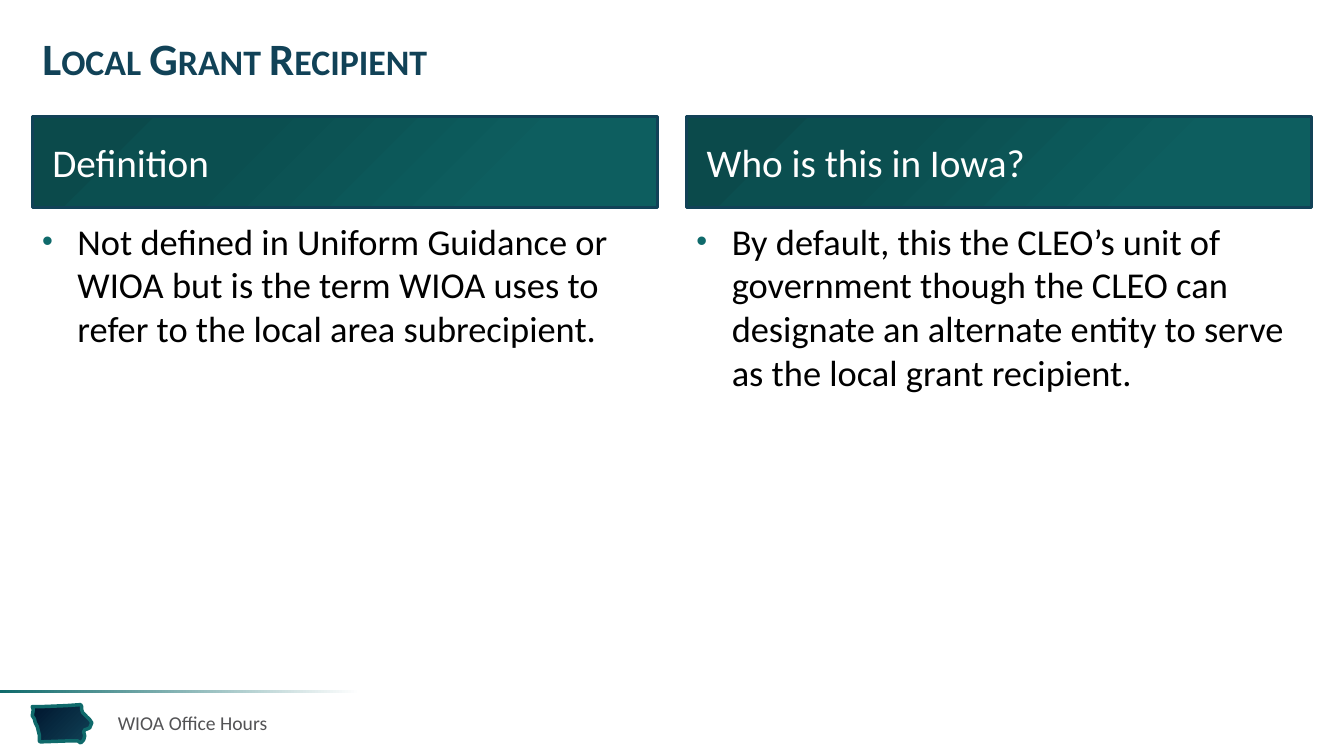
from dataclasses import dataclass

from lxml import etree
from pptx import Presentation
from pptx.dml.color import RGBColor
from pptx.enum.shapes import MSO_SHAPE
from pptx.enum.text import MSO_ANCHOR, MSO_AUTO_SIZE, PP_ALIGN
from pptx.oxml.ns import nsdecls, qn
from pptx.util import Pt

PX = 9144
RECTANGLE = MSO_SHAPE.RECTANGLE
TOP, MIDDLE = MSO_ANCHOR.TOP, MSO_ANCHOR.MIDDLE
LEFT, NO_FIT = PP_ALIGN.LEFT, MSO_AUTO_SIZE.NONE
TITLE_ONLY = 5


@dataclass(frozen=True)
class Theme:
    """Colours, gradients and type sizes of the slide."""
    font: str = "Calibri"
    navy: str = "114257"
    teal: str = "0F6A6B"
    white: str = "FFFFFF"
    black: str = "000000"
    grey: str = "535355"
    title_size: int = 32
    heading_size: int = 28
    body_size: int = 26
    footer_size: int = 14
    heading_stops: tuple = ((0, "0D5E5F"), (23, "0D5E5F"), (69, "0B4F50"), (97, "0B4A4B"))
    state_stops: tuple = ((0, "00162E"), (100, "114257"))
    rule_stops: tuple = ((6, "FFFFFF"), (100, "0F6A6B"))


THEME = Theme()

COLUMNS = (
    ("Definition",
     "Not defined in Uniform Guidance or WIOA but is the term WIOA uses to refer "
     "to the local area subrecipient."),
    ("Who is this in Iowa?",
     "By default, this the CLEO’s unit of government though the CLEO can designate "
     "an alternate entity to serve as the local grant recipient."),
)

STATE_OUTLINE = (
    (48, 0), (34, 1), (10, 2), (0, 2), (1, 5), (0, 11), (2, 14), (3, 18), (5, 22),
    (6, 26), (7, 30), (7, 36), (8, 37), (36, 36), (45, 36), (48, 38), (51, 35),
    (52, 31), (51, 27), (52, 25), (55, 24), (57, 23), (59, 18), (57, 15), (54, 12),
    (52, 10), (50, 8), (49, 5), (49, 2),
)


def px(*lengths):
    """Turn lengths in px into EMU."""
    return [length * PX for length in lengths]


def place(shape, box):
    """Put a shape at a (left, top, width, height) box in px."""
    shape.left, shape.top, shape.width, shape.height = px(*box)


def paint(shape, stops, angle=None, line=None, line_width=0):
    """Give a shape a linear or corner-centred gradient, and a line."""
    shape.shadow.inherit = False
    shape.fill.gradient()
    stop_xml = "".join(
        f'<a:gs pos="{pos * 1000}"><a:srgbClr val="{colour}"/></a:gs>' for pos, colour in stops)
    if angle is None:
        course = '<a:path path="circle"><a:fillToRect l="100000" t="100000"/></a:path>'
    else:
        course = f'<a:lin ang="{angle * 60000}" scaled="0"/>'
    gradient = etree.fromstring(
        f'<a:gradFill {nsdecls("a")} rotWithShape="1"><a:gsLst>{stop_xml}</a:gsLst>'
        f'{course}</a:gradFill>')
    properties = shape.element.spPr
    properties.replace(properties.find(qn("a:gradFill")), gradient)
    if line:
        shape.line.color.rgb = RGBColor.from_string(line)
        shape.line.width = Pt(line_width)
    else:
        shape.line.fill.background()


def add_bullet(paragraph, colour, indent):
    """Give a paragraph a hanging round bullet."""
    properties = paragraph._p.get_or_add_pPr()
    properties.set("marL", str(indent * PX))
    properties.set("indent", str(-indent * PX))
    for xml in (f'<a:buClr {nsdecls("a")}><a:srgbClr val="{colour}"/></a:buClr>',
                f'<a:buSzPct {nsdecls("a")} val="85000"/>',
                f'<a:buFont {nsdecls("a")} typeface="Arial"/>',
                f'<a:buChar {nsdecls("a")} char="•"/>'):
        properties.append(etree.fromstring(xml))


def write(shape, text, size, colour, bold=False, small_caps=False, anchor=TOP,
          insets=(10, 5, 10, 5), spacing=None, bullet=None):
    """Write one formatted paragraph into a shape."""
    frame = shape.text_frame
    frame.word_wrap = True
    frame.auto_size = NO_FIT
    frame.vertical_anchor = anchor
    (frame.margin_left, frame.margin_top,
     frame.margin_right, frame.margin_bottom) = px(*insets)
    paragraph = frame.paragraphs[0]
    paragraph.alignment = LEFT
    if spacing:
        paragraph.line_spacing = spacing
    if bullet:
        add_bullet(paragraph, bullet, indent=35)
    run = paragraph.add_run()
    run.text = text
    run.font.name = THEME.font
    run.font.size = Pt(size)
    run.font.bold = bold
    run.font.color.rgb = RGBColor.from_string(colour)
    if small_caps:
        run.font._element.set("cap", "small")


def add_title(slide, box, text):
    """Move and fill the title placeholder."""
    title = slide.shapes.title
    place(title, box)
    write(title, text, THEME.title_size, THEME.navy, bold=True, small_caps=True,
          anchor=MIDDLE, spacing=0.85)


def add_column(slide, box, heading, body):
    """Build a heading band with a bulleted text below it."""
    left, top, width, height = box
    band_height, gap = 90, 6
    band = slide.shapes.add_shape(RECTANGLE, *px(left, top, width, band_height))
    paint(band, THEME.heading_stops, line=THEME.navy, line_width=2)
    write(band, heading, THEME.heading_size, THEME.white, anchor=MIDDLE,
          insets=(20, 0, 20, 0))
    offset = band_height + gap
    details = slide.shapes.add_textbox(*px(left, top + offset, width, height - offset))
    write(details, body, THEME.body_size, THEME.black, bullet=THEME.teal)


def add_footer(slide, box, text):
    """Build the fading rule, the state outline and the footer text."""
    left, top, width, height = box
    rule = slide.shapes.add_shape(RECTANGLE, *px(left, top, 380, 3))
    paint(rule, THEME.rule_stops, angle=180)
    state_left, state_top = left + 32, top + 14
    outline = [(state_left + x, state_top + y) for x, y in STATE_OUTLINE]
    builder = slide.shapes.build_freeform(*outline[0], scale=PX)
    builder.add_line_segments(outline[1:], close=True)
    paint(builder.convert_to_shape(), THEME.state_stops, angle=45,
          line=THEME.teal, line_width=2.5)
    series = slide.shapes.add_textbox(*px(left + 107, top + 12, width - 427, height - 25))
    write(series, text, THEME.footer_size, THEME.grey, anchor=MIDDLE)


def main():
    """Build and save the slide."""
    deck = Presentation()
    deck.slide_width, deck.slide_height = px(1333, 750)
    slide = deck.slides.add_slide(deck.slide_layouts[TITLE_ONLY])
    margin, column_width, gutter = 32, 620, 29
    add_footer(slide, (0, 685, 1333, 65), "WIOA Office Hours")
    add_title(slide, (margin, 24, 2 * column_width + gutter, 75), "Local Grant Recipient")
    for index, (heading, body) in enumerate(COLUMNS):
        left = margin + index * (column_width + gutter)
        add_column(slide, (left, 116, column_width, 561), heading, body)
    deck.save("out.pptx")


if __name__ == "__main__":
    main()
